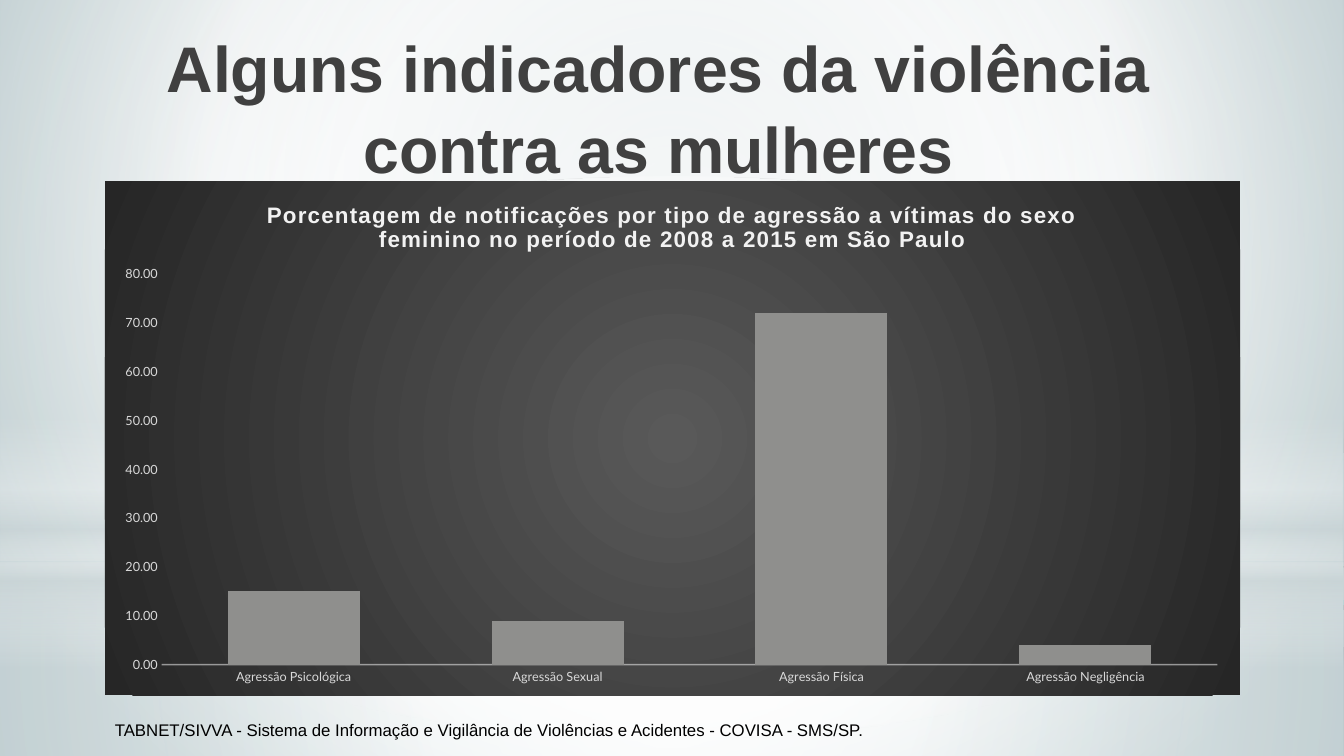
from lxml import etree
from pptx import Presentation
from pptx.chart.data import CategoryChartData
from pptx.dml.color import RGBColor
from pptx.enum.chart import XL_CHART_TYPE, XL_TICK_MARK
from pptx.enum.shapes import MSO_SHAPE
from pptx.enum.text import MSO_ANCHOR, PP_ALIGN
from pptx.oxml import parse_xml
from pptx.oxml.ns import nsdecls, qn
from pptx.util import Inches, Pt

COLUMN = XL_CHART_TYPE.COLUMN_CLUSTERED
NO_TICK = XL_TICK_MARK.NONE
RECTANGLE, OVAL = MSO_SHAPE.RECTANGLE, MSO_SHAPE.OVAL
TOP, LEFT, CENTER = MSO_ANCHOR.TOP, PP_ALIGN.LEFT, PP_ALIGN.CENTER

WHITE = RGBColor(0xFF, 0xFF, 0xFF)
BLACK = RGBColor(0, 0, 0)
MIST = RGBColor(0xCD, 0xD7, 0xD9)
PALE_TEAL = RGBColor(0xC2, 0xD0, 0xD3)
TEAL = RGBColor(0x9A, 0xB5, 0xBA)
TITLE_GRAY = RGBColor(0x40, 0x40, 0x40)
PANEL_LIGHT = RGBColor(0x59, 0x59, 0x59)
PANEL_DARK = RGBColor(0x26, 0x26, 0x26)
BAR_GRAY = RGBColor(0x8F, 0x8F, 0x8D)
LABEL_GRAY = RGBColor(0xD9, 0xD9, 0xD9)
OFF_WHITE = RGBColor(0xF2, 0xF2, 0xF2)
MIDDLE = (50, 50, 50, 50)


def set_gradient(properties, stops, focus=MIDDLE, angle=None):
    """Replace a solid fill by a gradient of (position, colour, opacity) stops."""
    gradient = etree.Element(qn("a:gradFill"), rotWithShape="1")
    stop_list = etree.SubElement(gradient, qn("a:gsLst"))
    for position, color, opacity in stops:
        stop = etree.SubElement(stop_list, qn("a:gs"), pos=str(position * 1000))
        stop_color = etree.SubElement(stop, qn("a:srgbClr"), val=str(color))
        if opacity < 100:
            etree.SubElement(stop_color, qn("a:alpha"), val=str(opacity * 1000))
    if angle is None:
        circle = etree.SubElement(gradient, qn("a:path"), path="circle")
        edges = {side: str(share * 1000) for side, share in zip("ltrb", focus)}
        etree.SubElement(circle, qn("a:fillToRect"), **edges)
    else:
        etree.SubElement(gradient, qn("a:lin"), ang=str(angle * 60000), scaled="0")
    properties.replace(properties.find(qn("a:solidFill")), gradient)


def write_text(frame, text, size, color, bold=False, align=LEFT, line_spacing=None):
    paragraph = frame.paragraphs[0]
    paragraph.alignment = align
    paragraph.line_spacing = line_spacing
    run = paragraph.add_run()
    run.text = text
    run.font.name = "Arial"
    run.font.size = Pt(size)
    run.font.bold = bold
    run.font.color.rgb = color
    return run


presentation = Presentation()
presentation.slide_width = Inches(13.33)
presentation.slide_height = Inches(7.5)
slide = presentation.slides.add_slide(presentation.slide_layouts[6])

# Background
slide.background.fill.solid()
slide.background.fill.fore_color.rgb = WHITE
set_gradient(slide.element.find(".//" + qn("p:bgPr")),
             [(0, PALE_TEAL, 100), (60, WHITE, 100), (100, TEAL, 100)],
             focus=(20, 10, 20, 60))

# Light layers: floor, wall, horizon, glow
layers = [
    (RECTANGLE, 5.58, 1.92, None, [(0, WHITE, 91), (37, WHITE, 76), (100, MIST, 79)]),
    (RECTANGLE, 0, 5.58, None, [(0, WHITE, 89), (48, WHITE, 62), (100, MIST, 79)]),
    (RECTANGLE, 4.12, 2.5, 90, [(0, WHITE, 0), (29, WHITE, 30), (45, MIST, 40),
                                (55, WHITE, 26), (65, MIST, 60), (100, WHITE, 0)]),
    (OVAL, 1.75, 5.58, None, [(0, WHITE, 100), (56, WHITE, 0)]),
]
for preset, top, height, angle, stops in layers:
    layer = slide.shapes.add_shape(preset, 0, Inches(top), presentation.slide_width,
                                   Inches(height))
    layer.shadow.inherit = False
    layer.line.fill.background()
    layer.fill.solid()
    layer.fill.fore_color.rgb = WHITE
    set_gradient(layer.element.spPr, stops, angle=angle)

# Title
title_box = slide.shapes.add_textbox(Inches(1.04), Inches(0.19), Inches(10.98), Inches(0.77))
title_box.text_frame.word_wrap = True
title_box.text_frame.vertical_anchor = TOP
write_text(title_box.text_frame, "Alguns indicadores da violência contra as mulheres",
           size=46, color=TITLE_GRAY, bold=True, align=CENTER, line_spacing=1.05)

# Chart
chart_data = CategoryChartData(number_format="0.00")
chart_data.categories = ["Agressão Psicológica", "Agressão Sexual",
                         "Agressão Física", "Agressão Negligência"]
chart_data.add_series("Series 1", (15, 9, 72, 4))
chart = slide.shapes.add_chart(COLUMN, Inches(1.04), Inches(1.8), Inches(11.26),
                               Inches(5.1), chart_data).chart
chart.has_legend = False
chart.font.name = "Lato"
chart.font.size = Pt(10)
chart.font.color.rgb = BLACK

chart.has_title = True
chart.chart_title.include_in_layout = False
chart_title = write_text(
    chart.chart_title.text_frame,
    "Porcentagem de notificações por tipo de agressão a vítimas do sexo "
    "feminino no período de 2008 a 2015 em São Paulo",
    size=16, color=OFF_WHITE, bold=True, align=CENTER)
chart_title.font._element.set("spc", "100")

plot = chart.plots[0]
plot.gap_width = 100
plot.overlap = -24
plot.vary_by_categories = False
bars = plot.series[0].format
bars.fill.solid()
bars.fill.fore_color.rgb = BAR_GRAY

# Axes
for axis in (chart.category_axis, chart.value_axis):
    axis.has_major_gridlines = False
    axis.major_tick_mark = NO_TICK
    axis.minor_tick_mark = NO_TICK
    axis.tick_labels.font.name = "Lato"
    axis.tick_labels.font.size = Pt(9)
    axis.tick_labels.font.color.rgb = LABEL_GRAY
chart.value_axis.minimum_scale = 0
chart.value_axis.maximum_scale = 80
chart.value_axis.major_unit = 10
chart.value_axis.tick_labels.number_format = "0.00"
chart.value_axis.tick_labels.number_format_is_linked = False
chart.value_axis.format.line.fill.background()
axis_line = chart.category_axis.format.line
axis_line.width = Pt(1)
axis_line.color.rgb = OFF_WHITE
axis_color = chart.category_axis._element.find(
    qn("c:spPr") + "/" + qn("a:ln") + "/" + qn("a:solidFill") + "/" + qn("a:srgbClr"))
etree.SubElement(axis_color, qn("a:alpha"), val="54000")

# Plot area position, as shares of the chart
plot_area = chart.element.find(".//" + qn("c:plotArea"))
old_layout = plot_area.find(qn("c:layout"))
if old_layout is not None:
    plot_area.remove(old_layout)
layout = etree.Element(qn("c:layout"))
manual = etree.SubElement(layout, qn("c:manualLayout"))
for name, value in (("layoutTarget", "inner"), ("xMode", "edge"), ("yMode", "edge"),
                    ("x", "0.05"), ("y", "0.18"), ("w", "0.93"), ("h", "0.76")):
    etree.SubElement(manual, qn("c:" + name), val=value)
plot_area.insert(0, layout)

# Dark chart panel
panel = parse_xml(f'<c:spPr {nsdecls("c", "a")}><a:solidFill/>'
                  '<a:ln><a:noFill/></a:ln></c:spPr>')
set_gradient(panel, [(0, PANEL_LIGHT, 100), (100, PANEL_DARK, 100)])
chart.element.find(qn("c:chart")).addnext(panel)

# Data source line
source_box = slide.shapes.add_textbox(Inches(1.04), Inches(7.09), Inches(11.89), Inches(0.3))
source_box.text_frame.word_wrap = True
write_text(source_box.text_frame,
           "TABNET/SIVVA - Sistema de Informação e Vigilância de Violências e Acidentes"
           " - COVISA - SMS/SP.", size=12, color=BLACK)

presentation.save("out.pptx")
